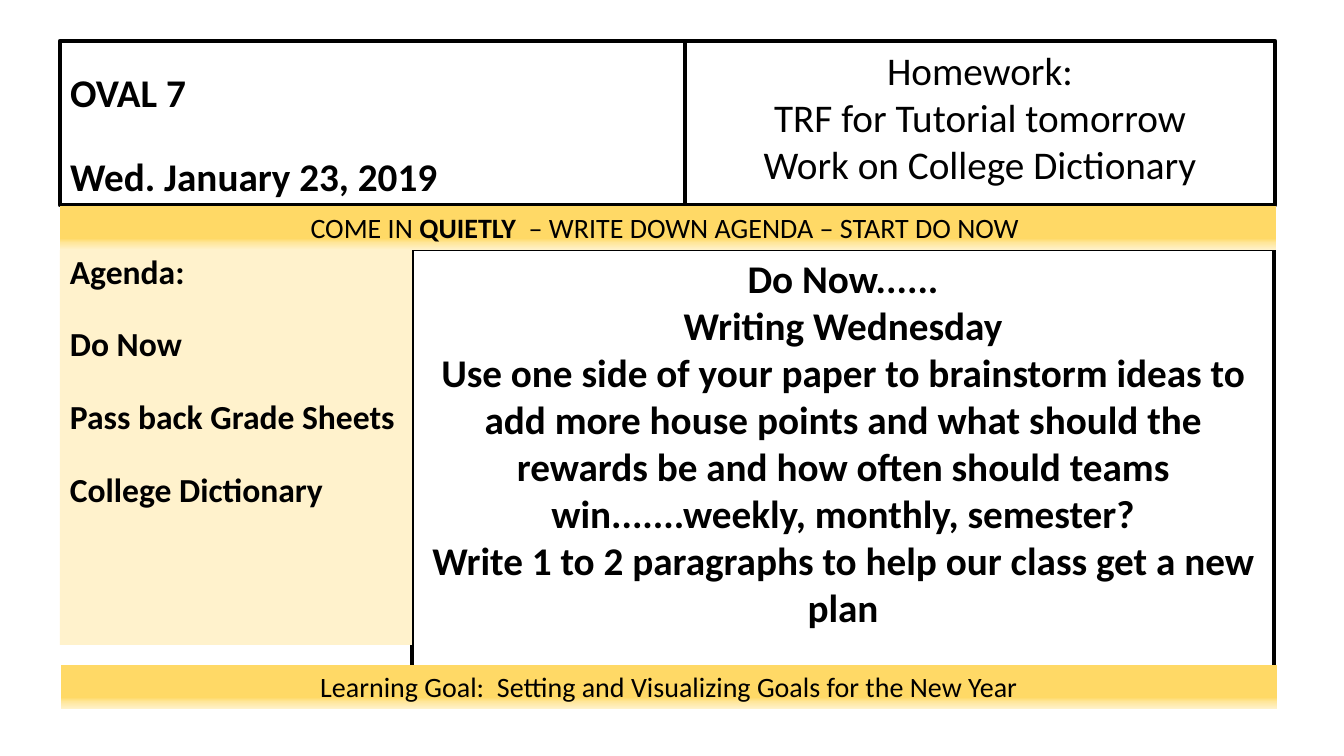
from lxml.etree import SubElement
from pptx import Presentation
from pptx.dml.color import RGBColor
from pptx.enum.shapes import MSO_SHAPE
from pptx.enum.text import MSO_ANCHOR, MSO_AUTO_SIZE, PP_ALIGN
from pptx.oxml.ns import qn
from pptx.util import Pt

COLORS = {"ink": "000000", "gold": "FFD966", "sand": "FFE699", "cream": "FFF2CC"}
GOLD_FADE = [(0, "gold"), (74, "gold"), (83, "sand"), (100, "cream")]
FONT = "Calibri"
SLIDE_SIZE = (1344, 756)
EMU_PER_PX = 914400 / 100.8

COURSE = ["OVAL 7", "Wed. January 23, 2019"]
HOMEWORK = ["Homework:", "TRF for Tutorial tomorrow", "Work on College Dictionary"]
DO_NOW = [
    "Do Now......",
    "Writing Wednesday",
    "Use one side of your paper to brainstorm ideas to add more house points and what "
    "should the rewards be and how often should teams win.......weekly, monthly, semester?",
    "Write 1 to 2 paragraphs to help our class get a new plan",
]
ENTRY = [[("COME IN ", False), ("QUIETLY", True),
          ("\u00a0 – WRITE DOWN AGENDA – START DO NOW\u00a0", False)]]
AGENDA = ["Agenda:", "Do Now", "Pass back Grade Sheets", "College Dictionary"]
GOAL = ["Learning Goal:\u00a0 Setting and Visualizing Goals for the New Year"]

CENTER, LEFT = PP_ALIGN.CENTER, PP_ALIGN.LEFT
PANELS = [
    {"text": COURSE, "box": (60, 41, 625, 164), "placeholder": 0, "outlined": True,
     "size": 28, "bold": True, "anchor": MSO_ANCHOR.BOTTOM,
     "format": {"alignment": LEFT, "line_spacing": 0.9, "space_before": Pt(30)}},
    {"text": HOMEWORK, "box": (685, 41, 590, 164), "placeholder": 1, "outlined": True,
     "size": 28, "format": {"alignment": CENTER, "line_spacing": 1.0, "space_before": Pt(0)}},
    {"text": DO_NOW, "box": (412, 249, 862, 437), "outlined": True,
     "size": 28, "bold": True, "format": {"alignment": CENTER}},
    {"text": ENTRY, "box": (60, 206, 1216, 44), "fade": True,
     "size": 20, "format": {"alignment": CENTER}},
    {"text": AGENDA, "box": (60, 250, 352, 395), "fill": "cream", "size": 24, "bold": True,
     "format": {"alignment": LEFT, "line_spacing": 0.9, "space_before": Pt(26)}},
    {"text": GOAL, "box": (61, 665, 1216, 44), "fade": True,
     "size": 20, "format": {"alignment": CENTER}},
]


def px(length):
    return round(length * EMU_PER_PX)


def color(name):
    return RGBColor.from_string(COLORS[name])


def apply(target, values):
    for name, value in values.items():
        setattr(target, name, value)


def fade_fill(panel):
    panel.fill.gradient()
    panel.fill.gradient_angle = 270
    stops = panel.element.spPr.find(qn("a:gradFill")).find(qn("a:gsLst"))
    for stop in list(stops):
        stops.remove(stop)
    for percent, name in GOLD_FADE:
        stop = SubElement(stops, qn("a:gs"), pos=str(percent * 1000))
        SubElement(stop, qn("a:srgbClr"), val=COLORS[name])


def paint(panel, spec):
    if spec.get("fade"):
        fade_fill(panel)
    elif "fill" in spec:
        panel.fill.solid()
        panel.fill.fore_color.rgb = color(spec["fill"])
    else:
        panel.fill.background()
    if spec.get("outlined"):
        panel.line.color.rgb = color("ink")
        panel.line.width = Pt(3.25)
    else:
        panel.line.fill.background()


def write(frame, spec):
    apply(frame, {"word_wrap": True, "auto_size": MSO_AUTO_SIZE.NONE,
                  "vertical_anchor": spec.get("anchor", MSO_ANCHOR.TOP)})
    for index, content in enumerate(spec["text"]):
        paragraph = frame.add_paragraph() if index else frame.paragraphs[0]
        apply(paragraph, spec["format"])
        if index == 0:
            paragraph.space_before = Pt(0)
        bold = spec.get("bold", False)
        for words, strong in [(content, bold)] if isinstance(content, str) else content:
            run = paragraph.add_run()
            run.text = words
            apply(run.font, {"name": FONT, "size": Pt(spec["size"]), "bold": strong})
            run.font.color.rgb = color("ink")


def main():
    deck = Presentation()
    deck.slide_width, deck.slide_height = map(px, SLIDE_SIZE)
    slide = deck.slides.add_slide(deck.slide_layouts[0])
    for spec in PANELS:
        box = [px(length) for length in spec["box"]]
        if "placeholder" in spec:
            panel = slide.placeholders[spec["placeholder"]]
            apply(panel, dict(zip(("left", "top", "width", "height"), box)))
        else:
            panel = slide.shapes.add_shape(MSO_SHAPE.RECTANGLE, *box)
            panel.shadow.inherit = False
        paint(panel, spec)
        write(panel.text_frame, spec)
    deck.save("out.pptx")


if __name__ == "__main__":
    main()
